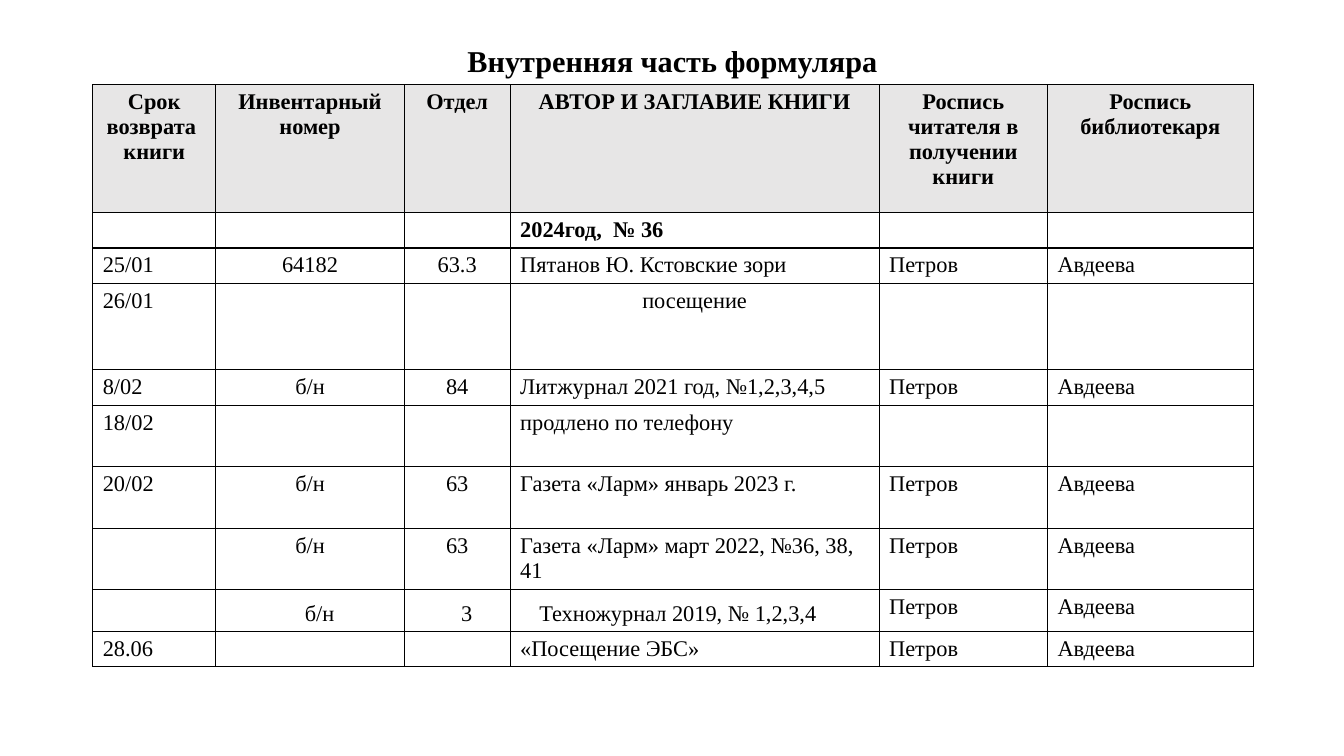
from dataclasses import dataclass

import pptx
import pptx.dml.color
import pptx.enum.text
import pptx.oxml
import pptx.oxml.ns
import pptx.presentation
import pptx.slide
import pptx.table
import pptx.text.text
import pptx.util
from pptx.util import Inches

BLACK = pptx.dml.color.RGBColor(0, 0, 0)
WHITE = pptx.dml.color.RGBColor(0xFF, 0xFF, 0xFF)
HEADER_GREY = pptx.dml.color.RGBColor(0xE7, 0xE6, 0xE6)
FONT = "Times New Roman"
TEXT_SIZE = 16
LEFT = PP_LEFT = pptx.enum.text.PP_ALIGN.LEFT
CENTER = pptx.enum.text.PP_ALIGN.CENTER
JUSTIFY = pptx.enum.text.PP_ALIGN.JUSTIFY

COLUMN_WIDTHS = (1.22, 1.87, 1.05, 3.66, 1.67, 2.04)
HEADER_HEIGHT = 1.27
HEADINGS = (
    ("Срок", "возврата ", "книги"),
    ("Инвентарный номер",),
    ("Отдел",),
    ("АВТОР И ЗАГЛАВИЕ КНИГИ",),
    ("Роспись читателя в получении книги",),
    ("Роспись библиотекаря",),
)
READER, LIBRARIAN = "Петров", "Авдеева"


@dataclass(frozen=True)
class Entry:
    due: str
    title: str
    height: float = 0.35
    number: str = ""
    section: str = ""
    signed: bool = True
    title_align: pptx.enum.text.PP_ALIGN = LEFT
    bold: bool = False
    indented: bool = False


ENTRIES = (
    Entry("", "2024год,  № 36", signed=False, bold=True),
    Entry("25/01", "Пятанов Ю. Кстовские зори", number="64182", section="63.3"),
    Entry("26/01", "посещение", 0.86, signed=False, title_align=CENTER),
    Entry("8/02", "Литжурнал 2021 год, №1,2,3,4,5", number="б/н", section="84"),
    Entry("18/02", "продлено по телефону", 0.61, signed=False),
    Entry("20/02", "Газета «Ларм» январь 2023 г.", 0.61, "б/н", "63"),
    Entry("", "Газета «Ларм» март 2022, №36, 38, 41", 0.61, "б/н", "63"),
    Entry("", "Техножурнал 2019, № 1,2,3,4", 0.41, "б/н", "3",
          title_align=JUSTIFY, indented=True),
    Entry("28.06", "«Посещение ЭБС»"),
)


def add_run(paragraph: pptx.text.text._Paragraph, text: str, size: float, bold: bool) -> None:
    run = paragraph.add_run()
    run.text = text
    run.font.name = FONT
    run.font.size = pptx.util.Pt(size)
    run.font.bold = bold
    run.font.color.rgb = BLACK


def style_cell(cell: pptx.table._Cell, fill: pptx.dml.color.RGBColor) -> None:
    """Give the cell thin black borders and a solid fill."""
    properties = cell._tc.get_or_add_tcPr()
    for side in ("lnL", "lnR", "lnT", "lnB"):
        properties.append(pptx.oxml.parse_xml(
            f'<a:{side} {pptx.oxml.ns.nsdecls("a")} w="{pptx.util.Pt(1)}">'
            f'<a:solidFill><a:srgbClr val="{BLACK}"/></a:solidFill></a:{side}>'))
    cell.fill.solid()
    cell.fill.fore_color.rgb = fill


def write_cell(cell: pptx.table._Cell, lines: tuple[str, ...],
               align: pptx.enum.text.PP_ALIGN, bold: bool, indented: bool = False) -> None:
    for index, line in enumerate(lines):
        frame = cell.text_frame
        paragraph = frame.add_paragraph() if index else frame.paragraphs[0]
        paragraph.alignment = align
        if not line:
            # The end mark's size keeps an empty cell as low as its row.
            paragraph._p.append(pptx.oxml.parse_xml(
                f'<a:endParaRPr {pptx.oxml.ns.nsdecls("a")} sz="{TEXT_SIZE * 100}">'
                f'<a:latin typeface="{FONT}"/></a:endParaRPr>'))
            continue
        if indented:
            paragraph.line_spacing = 1.28
            paragraph._p.get_or_add_pPr().set("indent", str(Inches(0.19)))
        add_run(paragraph, line, TEXT_SIZE, bold)


def add_title(slide: pptx.slide.Slide) -> None:
    title = slide.shapes.title
    title.left, title.top = Inches(0.92), Inches(0.4)
    title.width, title.height = Inches(11.5), Inches(0.44)
    title.text_frame.vertical_anchor = pptx.enum.text.MSO_ANCHOR.MIDDLE
    paragraph = title.text_frame.paragraphs[0]
    paragraph.alignment = CENTER
    paragraph.line_spacing = 0.9
    add_run(paragraph, "Внутренняя часть формуляра", 21.6, True)


def add_loan_table(slide: pptx.slide.Slide) -> None:
    heights = (HEADER_HEIGHT, *(entry.height for entry in ENTRIES))
    loans = slide.shapes.add_table(
        len(heights), len(COLUMN_WIDTHS), Inches(0.92), Inches(0.84),
        Inches(sum(COLUMN_WIDTHS)), Inches(sum(heights))).table
    loans.first_row = loans.horz_banding = False
    for column, width in zip(loans.columns, COLUMN_WIDTHS):
        column.width = Inches(width)
    for row, height in zip(loans.rows, heights):
        row.height = Inches(height)

    for cell, heading in zip(loans.rows[0].cells, HEADINGS):
        style_cell(cell, HEADER_GREY)
        write_cell(cell, heading, CENTER, True)

    for row_index, entry in enumerate(ENTRIES, start=1):
        fields = (
            (entry.due, LEFT, False),
            (entry.number, CENTER, entry.indented),
            (entry.section, CENTER, entry.indented),
            (entry.title, entry.title_align, entry.indented),
            (READER if entry.signed else "", LEFT, False),
            (LIBRARIAN if entry.signed else "", LEFT, False),
        )
        for cell, (text, align, indented) in zip(loans.rows[row_index].cells, fields):
            style_cell(cell, WHITE)
            write_cell(cell, (text,), align, entry.bold, indented)


def main() -> None:
    deck = pptx.Presentation()
    deck.slide_width, deck.slide_height = Inches(13.33), Inches(7.5)
    slide = deck.slides.add_slide(deck.slide_layouts.get_by_name("Title Only"))
    add_title(slide)
    add_loan_table(slide)
    deck.save("out.pptx")


if __name__ == "__main__":
    main()
